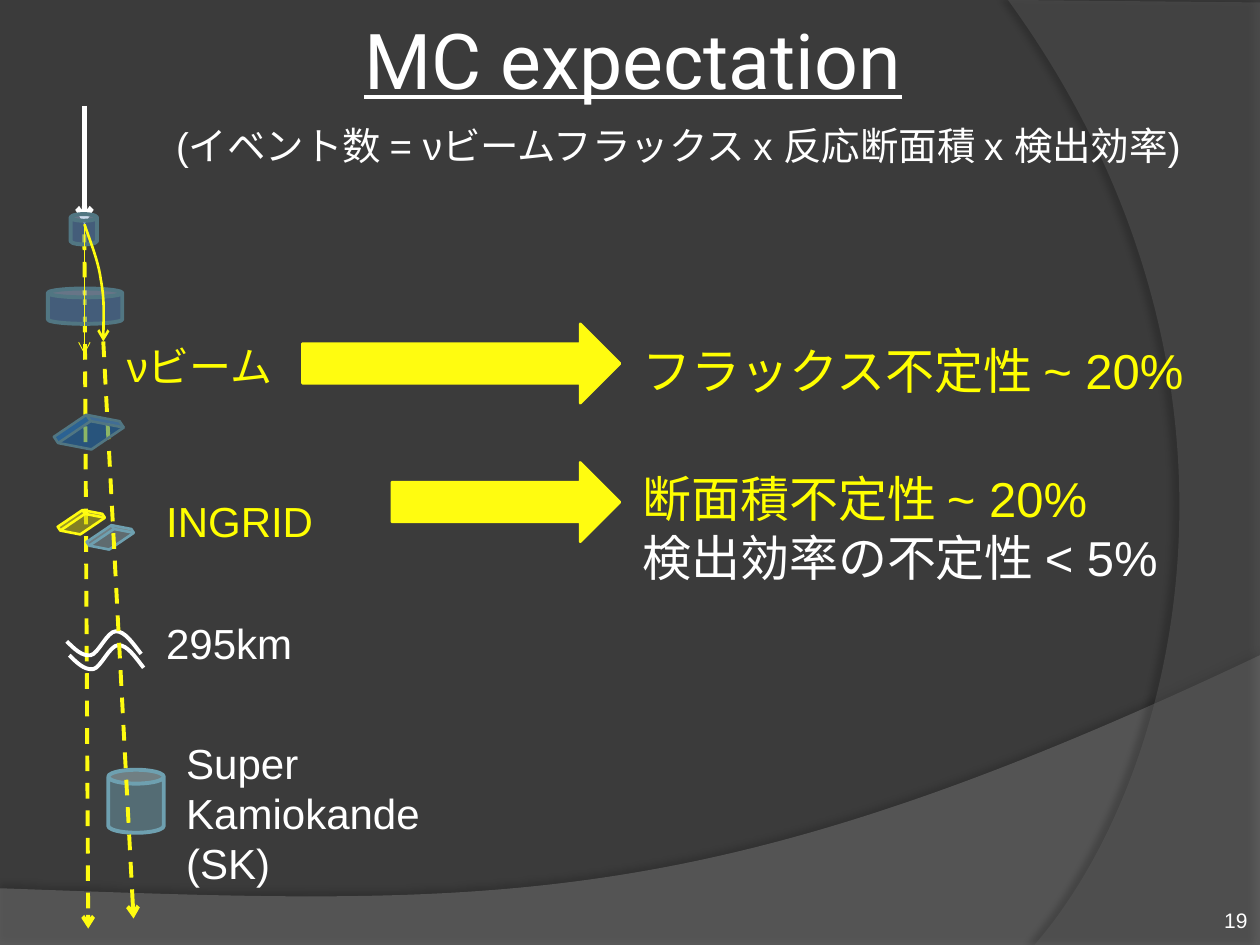
from lxml.etree import SubElement
from pptx import Presentation
from pptx.dml.color import RGBColor
from pptx.enum.dml import MSO_LINE
from pptx.enum.shapes import MSO_CONNECTOR, MSO_SHAPE
from pptx.enum.text import MSO_ANCHOR, MSO_AUTO_SIZE, PP_ALIGN
from pptx.oxml.ns import qn
from pptx.util import Pt

EMU_PER_PX = 9144
WHITE, YELLOW, BEAM = "FFFFFF", "FFFF00", "FFFC10"
STEEL, DARK_STEEL, BLUE = "6EA0B0", "517682", "4F81BD"


def px(length):
    """Turn px, 100 to the inch, into EMU."""
    return round(length * EMU_PER_PX)


def rgb(color):
    """Turn a hex string into a colour."""
    return RGBColor.from_string(color)


def paint(shape, color, opacity=100):
    """Fill a shape, optionally letting what lies behind show through."""
    shape.fill.solid()
    shape.fill.fore_color.rgb = rgb(color)
    if opacity < 100:
        tint = shape.element.spPr.find(qn("a:solidFill"))[0]
        SubElement(tint, qn("a:alpha"), val=str(opacity * 1000))


def stroke(shape, color, width, dashed=False, arrow=False):
    """Style a line and its arrowhead."""
    shape.line.color.rgb = rgb(color)
    shape.line.width = Pt(width)
    if dashed:
        shape.line.dash_style = MSO_LINE.DASH
    if arrow:
        SubElement(shape.element.spPr.find(qn("a:ln")), qn("a:tailEnd"), type="arrow")


def add_solid(shapes, preset, box, fill, outline, width, opacity=100):
    """Add a filled preset shape."""
    solid = shapes.add_shape(preset, *map(px, box))
    solid.shadow.inherit = False
    paint(solid, fill, opacity)
    stroke(solid, outline, width)
    return solid


def add_detector_plate(shapes, box, fill, outline):
    """Add a flat tilted cube."""
    plate = add_solid(shapes, MSO_SHAPE.CUBE, box, fill, outline, 1.5, 49)
    plate.adjustments[0] = 0.758
    plate.rotation = 55.9


def add_ray(shapes, start, end, color, width, dashed=False):
    """Add a straight line ending in an arrowhead."""
    ray = shapes.add_connector(MSO_CONNECTOR.STRAIGHT, *map(px, start + end))
    stroke(ray, color, width, dashed, arrow=True)
    SubElement(ray.element.spPr, qn("a:effectLst"))


def add_outline(shapes, start, segments, close=False):
    """Add a freeform; a segment has one point, or three for a cubic curve."""
    builder = shapes.build_freeform(*map(px, start))
    builder.add_line_segments([tuple(map(px, s[-1])) for s in segments], close=close)
    outline = builder.convert_to_shape()
    outline.shadow.inherit = False
    sides = list(outline.element.spPr.iter(qn("a:lnTo")))
    for side, segment in zip(sides, segments):
        if len(segment) == 3:
            side.tag = qn("a:cubicBezTo")
            side.remove(side[0])
            for x, y in segment:
                SubElement(side, qn("a:pt"), x=str(px(x) - outline.left),
                           y=str(px(y) - outline.top))
    return outline


def add_swoosh(shapes, start, segments, color, opacity, shade, distance, angle):
    """Add a translucent background area with a soft shadow."""
    swoosh = add_outline(shapes, start, segments, close=True)
    paint(swoosh, color, opacity)
    swoosh.line.fill.background()
    effects = swoosh.element.spPr.find(qn("a:effectLst"))
    shadow = SubElement(effects, qn("a:outerShdw"), blurRad=str(Pt(4)),
                        dist=str(Pt(distance)), dir=str(angle * 60000))
    black = SubElement(shadow, qn("a:srgbClr"), val="000000")
    SubElement(black, qn("a:alpha"), val=str(shade * 1000))


def add_curve(shapes, start, segments, color, width, arrow=False):
    """Add an open curve."""
    curve = add_outline(shapes, start, segments)
    curve.fill.background()
    stroke(curve, color, width, arrow=arrow)


def add_label(shapes, box, lines, size, font="Arial", align=PP_ALIGN.LEFT,
              underline=None, fixed=False):
    """Add text given as (wording, colour) lines of one paragraph."""
    frame = shapes.add_textbox(*map(px, box)).text_frame
    frame.word_wrap = True
    if fixed:
        frame.vertical_anchor = MSO_ANCHOR.MIDDLE
    else:
        frame.auto_size = MSO_AUTO_SIZE.SHAPE_TO_FIT_TEXT
    paragraph = frame.paragraphs[0]
    paragraph.alignment = align
    for index, (wording, color) in enumerate(lines):
        if index:
            paragraph.add_line_break()
        run = paragraph.add_run()
        run.text = wording
        run.font.size = Pt(size)
        run.font.name = font
        run.font.underline = underline
        run.font.color.rgb = rgb(color)


def add_backdrop(slide):
    """Add the dark background and its two swooshes."""
    slide.background.fill.solid()
    slide.background.fill.fore_color.rgb = rgb("3B3B3B")
    hill = [[(0, 751)], [(1000, 751)], [(1000, 520)],
            [(559, 729), (391, 719), (0, 705)]]
    add_swoosh(slide.shapes, (0, 705), hill, "7F7F7F", 45, 35, 3.5, 270)
    side = [[(1000, 750)], [(821, 750)],
            [(935, 619), (1018, 300), (800, 0)], [(1000, 2)]]
    add_swoosh(slide.shapes, (1000, 2), side, "5E5E5E", 40, 45, 4, 180)


def add_beamline(shapes):
    """Add the beam from its source down to the far detector."""
    target, bend = (67, 178), (82, 271)
    add_ray(shapes, (67, 186), (70, 737), BEAM, 2.25, dashed=True)
    for x, y in ((55, 520), (53, 509)):
        wave = [[(x + 6, y + 6), (x + 12, y + 12), (x + 19, y + 11)],
                [(x + 25, y + 10), (x + 32, y - 8), (x + 39, y - 8)],
                [(x + 46, y - 8), (x + 52, y + 1), (x + 59, y + 10)]]
        add_curve(shapes, (x, y), wave, WHITE, 2.25)
    add_detector_plate(shapes, (80, 409, 15, 35), "A8C6D0", STEEL)
    add_solid(shapes, MSO_SHAPE.CAN, (86, 611, 44, 50), STEEL, STEEL, 2.25, 49)
    add_label(shapes, (122, 485, 126, 50), [("295km", WHITE)], 24)
    add_label(shapes, (91, 265, 157, 50), [("νビーム", YELLOW)], 24)
    add_ray(shapes, (67, 84), target, WHITE, 3)
    for box in ((56, 170, 21, 24), (38, 229, 59, 28)):
        add_solid(shapes, MSO_SHAPE.CAN, box, BLUE, DARK_STEEL, 2.25, 49)
    pion = [[(72, 193), (78, 207), (80, 222)], [(83, 238), (82, 254), bend]]
    add_curve(shapes, target, pion, BEAM, 1.5, arrow=True)
    add_ray(shapes, bend, (106, 729), BEAM, 2.25, dashed=True)
    add_detector_plate(shapes, (58, 318, 25, 50), "1C8BF0", DARK_STEEL)


def main():
    """Build the slide and save it."""
    deck = Presentation()
    deck.slide_width, deck.slide_height = px(1000), px(750)
    slide = deck.slides.add_slide(deck.slide_layouts[6])
    shapes = slide.shapes
    add_backdrop(slide)
    add_label(shapes, (-9, 0, 1023, 93), [("MC expectation", WHITE)], 44, "Roboto",
              PP_ALIGN.CENTER, underline=True, fixed=True)
    add_label(shapes, (914, 710, 86, 40), [("19", WHITE)], 12,
              align=PP_ALIGN.RIGHT, fixed=True)
    add_label(shapes, (122, 388, 165, 50), [("INGRID", YELLOW)], 24)
    add_label(shapes, (138, 580, 220, 131),
              [("Super ", WHITE), ("Kamiokande", WHITE), ("(SK)", WHITE)], 24)
    add_beamline(shapes.add_group_shape().shapes)
    add_detector_plate(shapes, (57, 397, 15, 35), BEAM, BEAM)
    add_ray(shapes, (67, 178), (67, 281), BEAM, 0.5)
    for box in ((240, 257, 252, 63), (311, 367, 181, 63)):
        add_solid(shapes, MSO_SHAPE.RIGHT_ARROW, box, BEAM, BEAM, 1.5)
    add_label(shapes, (130, 92, 870, 47),
              [("(イベント数 = νビームフラックス x 反応断面積 x 検出効率)", WHITE)], 22)
    add_label(shapes, (500, 265, 469, 57), [("フラックス不定性 ~ 20%", YELLOW)], 28)
    add_label(shapes, (500, 367, 469, 104),
              [("断面積不定性 ~ 20%", YELLOW), ("検出効率の不定性 < 5%", WHITE)], 28)
    deck.save("out.pptx")


if __name__ == "__main__":
    main()
